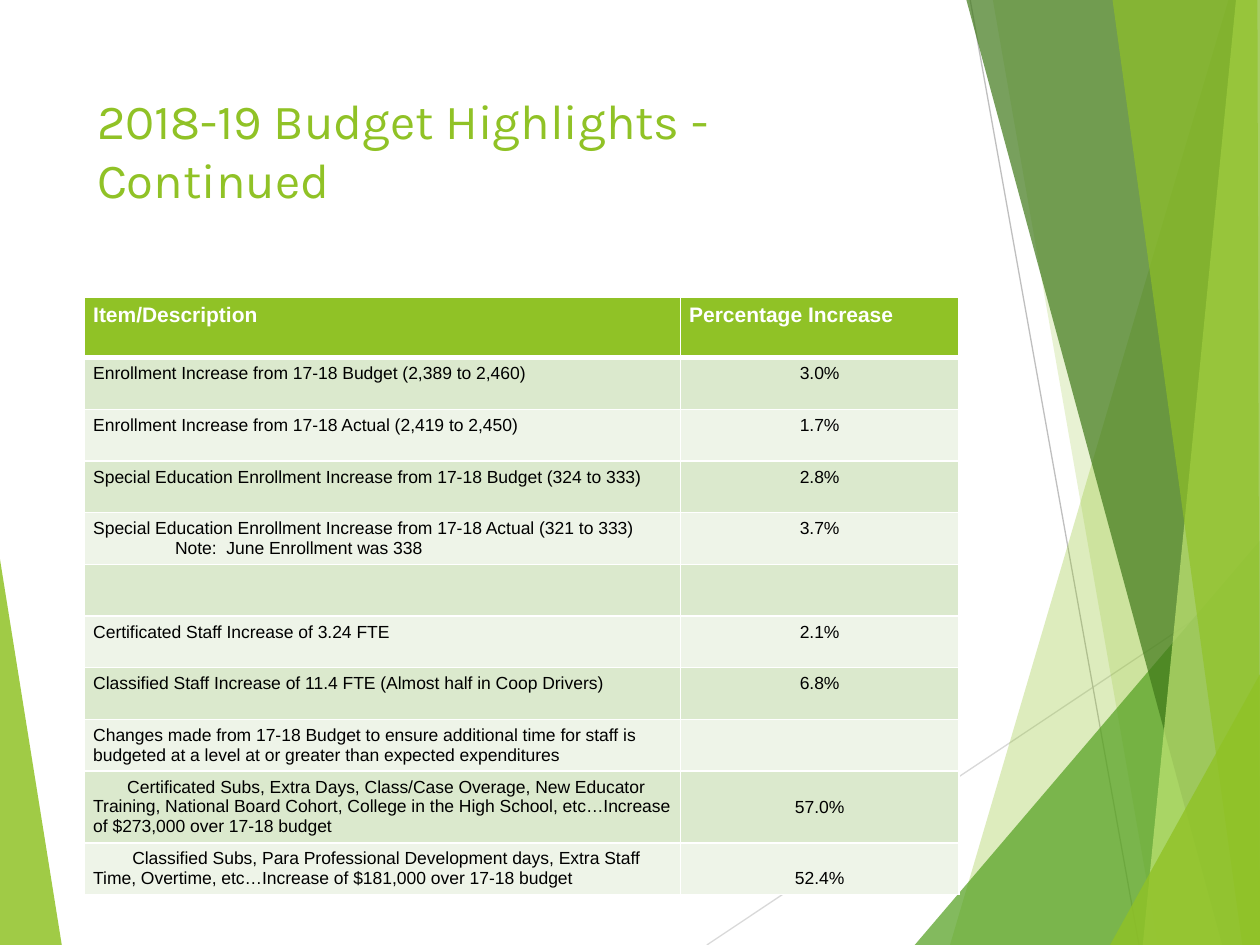
"""Build the 2018-19 budget highlights slide with its table of percentage increases."""
from lxml import etree
from pptx import Presentation
from pptx.dml.color import RGBColor
from pptx.enum.shapes import MSO_CONNECTOR
from pptx.enum.text import MSO_ANCHOR, MSO_AUTO_SIZE, PP_ALIGN
from pptx.oxml import parse_xml
from pptx.oxml.ns import nsdecls, qn
from pptx.util import Inches, Pt

LEFT, CENTER = PP_ALIGN.LEFT, PP_ALIGN.CENTER
TOP, MIDDLE, BOTTOM = MSO_ANCHOR.TOP, MSO_ANCHOR.MIDDLE, MSO_ANCHOR.BOTTOM
STRAIGHT = MSO_CONNECTOR.STRAIGHT
NO_AUTOFIT = MSO_AUTO_SIZE.NONE

LIME = RGBColor(0x90, 0xC2, 0x26)
GREEN = RGBColor(0x54, 0xA0, 0x21)
FOREST = RGBColor(0x3F, 0x78, 0x19)
PALE_LIME = RGBColor(0xC0, 0xE4, 0x74)
BAND_DARK = RGBColor(0xDB, 0xE9, 0xCD)
BAND_LIGHT = RGBColor(0xEE, 0xF4, 0xE8)
LIGHT_GRAY = RGBColor(0xD9, 0xD9, 0xD9)
GRAY = RGBColor(0xBF, 0xBF, 0xBF)
WHITE = RGBColor(0xFF, 0xFF, 0xFF)
BLACK = RGBColor(0, 0, 0)

LEFT_WEDGE = ([(0, 4.44), (0.49, 7.5), (0, 7.5)], LIME, 85)
LINES = [
    ((5.61, 7.5), (10, 4.57), LIGHT_GRAY),
    ((7.7, 0), (9.04, 7.5), GRAY),
]
RIGHT_WEDGES = [
    ([(9.75, 0), (7.54, 7.5), (10, 7.5), (10, 0)], LIME, 30),
    ([(7.88, 0), (9.19, 7.5), (10, 7.5), (10, 0)], LIME, 20),
    ([(7.26, 7.5), (10, 4.29), (10, 7.5)], GREEN, 72),
    ([(7.67, 0), (9.7, 7.5), (10, 7.5), (10, 0)], FOREST, 70),
    ([(9.81, 0), (9.07, 7.5), (10, 7.5), (10, 0)], PALE_LIME, 70),
    ([(8.83, 0), (9.86, 7.5), (10, 7.5), (9.98, 0)], LIME, 65),
    ([(8.81, 7.5), (10, 5.35), (10, 7.5)], LIME, 80),
]

HEADER = ("Item/Description", "Percentage Increase")
ROWS = [
    ([("Enrollment Increase from 17-18 Budget (2,389 to 2,460)", 0)], "3.0%", TOP),
    ([("Enrollment Increase from 17-18 Actual (2,419 to 2,450)", 0)], "1.7%", TOP),
    ([("Special Education Enrollment Increase from 17-18 Budget (324 to 333)", 0)], "2.8%", TOP),
    ([("Special Education Enrollment Increase from 17-18 Actual (321 to 333)", 0),
      ("Note:  June Enrollment was 338", 0.65)], "3.7%", TOP),
    ([], "", TOP),
    ([("Certificated Staff Increase of 3.24 FTE", 0)], "2.1%", TOP),
    ([("Classified Staff Increase of 11.4 FTE (Almost half in Coop Drivers)", 0)], "6.8%", TOP),
    ([("Changes made from 17-18 Budget to ensure additional time for staff is "
       "budgeted at a level at or greater than expected expenditures", 0)], "", TOP),
    ([("Certificated Subs, Extra Days, Class/Case Overage, New Educator Training, "
       "National Board Cohort, College in the High School, etc…Increase of $273,000 "
       "over 17-18 budget", 0.27)], "57.0%", MIDDLE),
    ([("Classified Subs, Para Professional Development days, Extra Staff Time, "
       "Overtime, etc…Increase of $181,000 over 17-18 budget", 0.31)], "52.4%", BOTTOM),
]
COL_WIDTHS = (4.73, 2.21)
ROW_HEIGHTS = [0.48] + [0.41] * 8 + [0.57, 0.41]


class Deck:
    """Hold the style and the current slide."""

    title_font, body_font = "Karla", "Arial"

    def __init__(self, prs):
        self.s = prs.slides.add_slide(prs.slide_layouts[5])

    def add_run(self, p, text, font, size, color, bold=False):
        r = p.add_run()
        r.text = text
        r.font.name, r.font.size, r.font.bold = font, Pt(size), bold
        r.font.color.rgb = color

    def title(self, text, x, y, w, h):
        sp = self.s.shapes.title
        sp.left, sp.top, sp.width, sp.height = map(Inches, (x, y, w, h))
        tf = sp.text_frame
        tf.word_wrap, tf.auto_size, tf.vertical_anchor = True, NO_AUTOFIT, TOP
        p = tf.paragraphs[0]
        p.alignment = LEFT
        self.add_run(p, text, self.title_font, 28, LIME)

    def wedge(self, points, color, opacity):
        pts = [(Inches(x), Inches(y)) for x, y in points]
        builder = self.s.shapes.build_freeform(*pts[0])
        builder.add_line_segments(pts[1:], close=True)
        sp = builder.convert_to_shape()
        sp.shadow.inherit = False
        sp.line.fill.background()
        sp.fill.solid()
        sp.fill.fore_color.rgb = color
        clr = sp.fill._xPr.find(".//" + qn("a:srgbClr"))
        etree.SubElement(clr, qn("a:alpha"), val=str(opacity * 1000))

    def line(self, start, end, color):
        cxn = self.s.shapes.add_connector(STRAIGHT, *map(Inches, start + end))
        cxn.line.color.rgb, cxn.line.width = color, Pt(0.75)
        etree.SubElement(cxn._element.spPr, qn("a:effectLst"))

    def table(self, x, y, widths, heights):
        frame = self.s.shapes.add_table(
            len(heights), len(widths), Inches(x), Inches(y),
            Inches(sum(widths)), Inches(sum(heights)))
        tbl = frame.table
        for col, w in zip(tbl.columns, widths):
            col.width = Inches(w)
        for row, h in zip(tbl.rows, heights):
            row.height = Inches(h)
        return tbl

    def cell(self, cell, paras, fill, size=10, color=BLACK, bold=False,
             align=LEFT, anchor=TOP, top=1, bottom=1):
        cell.margin_left = cell.margin_right = Inches(0.07)
        cell.margin_top = cell.margin_bottom = Inches(0.05)
        cell.vertical_anchor = anchor
        tcPr = cell._tc.get_or_add_tcPr()
        for side, width in zip("LRTB", (1, 1, top, bottom)):
            tcPr.append(parse_xml(
                f'<a:ln{side} {nsdecls("a")} w="{Pt(width)}"><a:solidFill>'
                f'<a:srgbClr val="{WHITE}"/></a:solidFill></a:ln{side}>'))
        cell.fill.solid()
        cell.fill.fore_color.rgb = fill
        tf = cell.text_frame
        for i, (text, indent) in enumerate(paras):
            p = tf.add_paragraph() if i else tf.paragraphs[0]
            p.alignment = align
            if indent:
                p._p.get_or_add_pPr().set("indent", str(Inches(indent)))
            self.add_run(p, text, self.body_font, size, color, bold)


def main():
    prs = Presentation()
    prs.slide_width, prs.slide_height = Inches(10), Inches(7.5)
    deck = Deck(prs)
    deck.wedge(*LEFT_WEDGE)
    for line in LINES:
        deck.line(*line)
    for wedge in RIGHT_WEDGES:
        deck.wedge(*wedge)
    deck.title("2018-19 Budget Highlights - Continued", 0.67, 0.67, 6.94, 1.44)

    tbl = deck.table(0.67, 2.36, COL_WIDTHS, ROW_HEIGHTS)
    for c, text in enumerate(HEADER):
        deck.cell(tbl.cell(0, c), [(text, 0)], LIME, 12, WHITE, True, bottom=3)
    for i, (items, percent, anchor) in enumerate(ROWS, 1):
        fill = BAND_DARK if i % 2 else BAND_LIGHT
        top = 3 if i == 1 else 1
        values = [(percent, 0)] if percent else []
        deck.cell(tbl.cell(i, 0), items, fill, top=top)
        deck.cell(tbl.cell(i, 1), values, fill, align=CENTER, anchor=anchor, top=top)
    prs.save("out.pptx")


if __name__ == "__main__":
    main()
